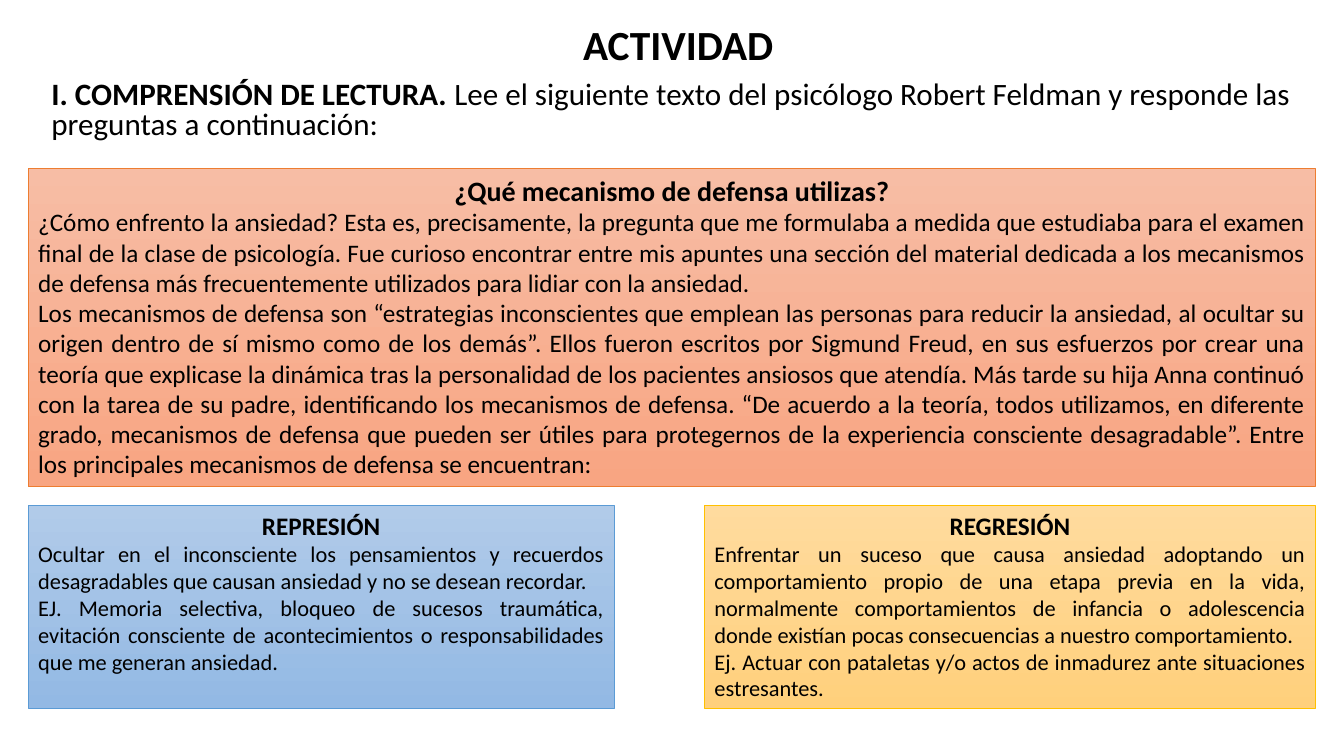
from lxml.etree import SubElement
from pptx import Presentation
from pptx.dml.color import RGBColor
from pptx.enum.shapes import MSO_SHAPE
from pptx.enum.text import MSO_ANCHOR, MSO_AUTO_SIZE, PP_ALIGN
from pptx.oxml.ns import qn
from pptx.util import Pt

BLACK = RGBColor(0x00, 0x00, 0x00)
CORAL = RGBColor(0xF7, 0xBD, 0xA5)
SALMON = RGBColor(0xF8, 0xA5, 0x82)
ORANGE = RGBColor(0xED, 0x7D, 0x31)
SKY = RGBColor(0xB1, 0xCB, 0xE9)
AZURE = RGBColor(0x93, 0xB9, 0xE4)
BLUE = RGBColor(0x5B, 0x9B, 0xD5)
CREAM = RGBColor(0xFF, 0xDB, 0x9E)
AMBER = RGBColor(0xFF, 0xD0, 0x7C)
GOLD = RGBColor(0xFF, 0xC0, 0x00)

LEFT, RIGHT = 20.2, 939.6
FRAME = {
    "word_wrap": True,
    "auto_size": MSO_AUTO_SIZE.NONE,
    "vertical_anchor": MSO_ANCHOR.TOP,
    "margin_left": Pt(7.2),
    "margin_right": Pt(7.2),
    "margin_top": Pt(3.6),
    "margin_bottom": Pt(3.6),
}


def apply(item, values):
    for name, value in values.items():
        setattr(item, name, value)


def place(shape, box):
    names = ("left", "top", "width", "height")
    apply(shape, dict(zip(names, map(Pt, box))))


def write(para, text, size, bold):
    run = para.add_run()
    run.text = text
    apply(run.font, {"name": "Calibri", "size": Pt(size), "bold": bold})
    run.font.color.rgb = BLACK


def fill_in(frame, rows):
    apply(frame, FRAME)
    for index, (form, runs) in enumerate(rows):
        para = frame.add_paragraph() if index else frame.paragraphs[0]
        apply(para, form)
        for run in runs:
            write(para, *run)


def heading(slide, box):
    body = slide.placeholders[1]
    place(body, box)
    fill_in(body.text_frame, [
        ({"alignment": PP_ALIGN.CENTER, "line_spacing": 0.8, "space_before": Pt(0)},
         [("ACTIVIDAD", 29.6, True)]),
        ({"alignment": PP_ALIGN.LEFT, "line_spacing": 0.8, "space_before": Pt(10)},
         [("I. COMPRENSIÓN DE LECTURA. ", 22.2, True),
          ("Lee el siguiente texto del psicólogo Robert Feldman y responde las "
           "preguntas a continuación:", 22.2, False)]),
    ])
    for para in body.text_frame.paragraphs:
        props = para._p.get_or_add_pPr()
        apply_indent = {"marL": "0", "indent": "0"}
        for name, value in apply_indent.items():
            props.set(name, value)
        SubElement(props, qn("a:buNone"))


def panel(slide, box, tones, title, texts, size):
    shape = slide.shapes.add_shape(MSO_SHAPE.RECTANGLE, *map(Pt, box))
    shape.shadow.inherit = False
    light, deep, edge = tones
    shape.fill.gradient()
    shape.fill.gradient_angle = 270
    for stop, tone, point in zip(shape.fill.gradient_stops, (light, deep), (0, 1)):
        stop.color.rgb = tone
        stop.position = point
    shape.line.color.rgb = edge
    shape.line.width = Pt(0.5)
    rows = [({"alignment": PP_ALIGN.CENTER}, [(title, size + 2, True)])]
    rows += [({"alignment": PP_ALIGN.JUSTIFY}, [(text, size, False)]) for text in texts]
    fill_in(shape.text_frame, rows)


def reading(slide, box):
    panel(slide, box, (CORAL, SALMON, ORANGE), "¿Qué mecanismo de defensa utilizas?", [
        "¿Cómo enfrento la ansiedad? Esta es, precisamente, la pregunta que me formulaba "
        "a medida que estudiaba para el examen final de la clase de psicología. Fue curioso "
        "encontrar entre mis apuntes una sección del material dedicada a los mecanismos de "
        "defensa más frecuentemente utilizados para lidiar con la ansiedad.",
        "Los mecanismos de defensa son “estrategias inconscientes que emplean las personas "
        "para reducir la ansiedad, al ocultar su origen dentro de sí mismo como de los "
        "demás”. Ellos fueron escritos por Sigmund Freud, en sus esfuerzos por crear una "
        "teoría que explicase la dinámica tras la personalidad de los pacientes ansiosos que "
        "atendía. Más tarde su hija Anna continuó con la tarea de su padre, identificando los "
        "mecanismos de defensa. “De acuerdo a la teoría, todos utilizamos, en diferente "
        "grado, mecanismos de defensa que pueden ser útiles para protegernos de la "
        "experiencia consciente desagradable”. Entre los principales mecanismos de defensa "
        "se encuentran:",
    ], 18)


def defenses(slide, box):
    left, top, width, height = box
    first, second = 418.3, 436.3
    panel(slide, (left, top, first, height), (SKY, AZURE, BLUE), "REPRESIÓN", [
        "Ocultar en el inconsciente los pensamientos y recuerdos desagradables que causan "
        "ansiedad y no se desean recordar.",
        "EJ. Memoria selectiva, bloqueo de sucesos traumática, evitación consciente de "
        "acontecimientos o responsabilidades que me generan ansiedad.",
    ], 16)
    start = left + width - second
    panel(slide, (start, top, second, height), (CREAM, AMBER, GOLD), "REGRESIÓN", [
        "Enfrentar un suceso que causa ansiedad adoptando un comportamiento propio de una "
        "etapa previa en la vida, normalmente comportamientos de infancia o adolescencia "
        "donde existían pocas consecuencias a nuestro comportamiento.",
        "Ej. Actuar con pataletas y/o actos de inmadurez ante situaciones estresantes.",
    ], 16)


def main():
    deck = Presentation()
    apply(deck, {"slide_width": Pt(960), "slide_height": Pt(540)})
    slide = deck.slides.add_slide(deck.slide_layouts[1])
    title = slide.shapes.title.element
    title.getparent().remove(title)
    heading(slide, (29.5, 16.6, 910.1, 90.7))
    reading(slide, (LEFT, 120.2, RIGHT - LEFT, 227.5))
    defenses(slide, (LEFT, 360.7, RIGHT - LEFT, 145.4))
    deck.save("out.pptx")


if __name__ == "__main__":
    main()
